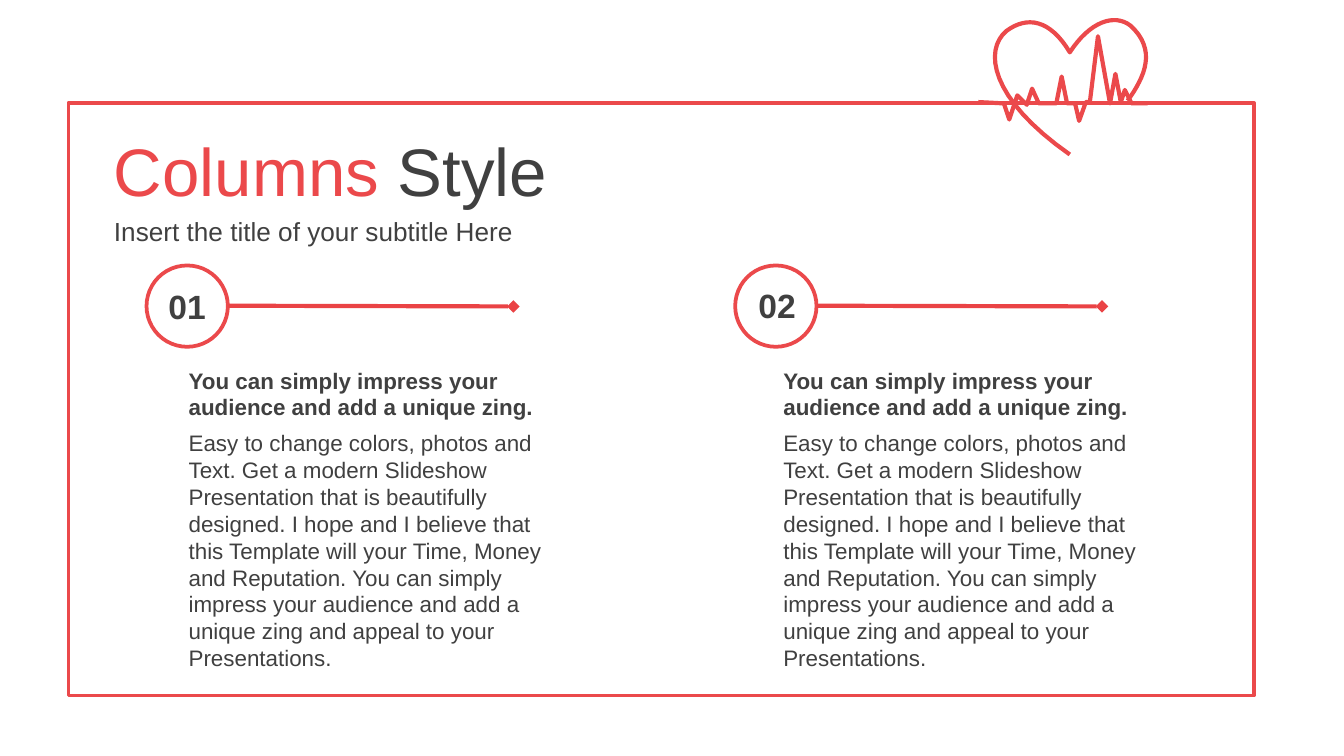
from lxml import etree
from pptx import Presentation
from pptx.dml.color import RGBColor
from pptx.enum.shapes import MSO_CONNECTOR, MSO_SHAPE
from pptx.enum.text import MSO_ANCHOR
from pptx.oxml.ns import qn
from pptx.util import Emu, Pt

PX = 4572  # EMU per px, 200 px to the inch
RED = RGBColor(0xEB, 0x49, 0x4B)
LINE_RED = RGBColor(0xEA, 0x43, 0x45)
DARK = RGBColor(0x40, 0x40, 0x40)
WHITE = RGBColor(0xFF, 0xFF, 0xFF)
FONT = "Arial"
RECT, OVAL = MSO_SHAPE.RECTANGLE, MSO_SHAPE.OVAL
STRAIGHT = MSO_CONNECTOR.STRAIGHT
TOP, MIDDLE = MSO_ANCHOR.TOP, MSO_ANCHOR.MIDDLE

HEADING = "You can simply impress your audience and add a unique zing."
BODY = ("Easy to change colors, photos and Text. Get a modern Slideshow "
        "Presentation that is beautifully designed. I hope and I believe that "
        "this Template will your Time, Money and Reputation. You can simply "
        "impress your audience and add a unique zing and appeal to your "
        "Presentations.")

# Number, circle left, number position, text left
COLUMNS = [
    ("01", 218, (231, 416), 261),
    ("02", 1094, (1109, 414), 1146),
]

# Heart outline: start point, then two control points and an end per curve
HEART_START = (1592, 230)
HEART_CURVES = [
    ((1472, 146), (1464, 74), (1498, 46)),
    ((1528, 24), (1562, 28), (1592, 78)),
    ((1622, 32), (1658, 20), (1682, 38)),
    ((1722, 74), (1704, 114), (1678, 150)),
]
PULSE = [
    (1456, 152), (1494, 154), (1502, 178), (1514, 142), (1528, 156),
    (1536, 132), (1546, 154), (1572, 154), (1580, 114), (1588, 154),
    (1600, 154), (1606, 180), (1616, 152), (1622, 152), (1634, 54),
    (1652, 154), (1660, 110), (1668, 152), (1674, 134), (1684, 154),
    (1708, 154),
]


def px(*values):
    return [Emu(round(v * PX)) for v in values]


def style_line(line, color, width):
    line.color.rgb = color
    line.width = Pt(width)


def add_outline(s, kind, box, fill=None):
    sp = s.shapes.add_shape(kind, *px(*box))
    sp.shadow.inherit = False
    if fill is None:
        sp.fill.background()
    else:
        sp.fill.solid()
        sp.fill.fore_color.rgb = fill
    style_line(sp.line, RED, 2)


def add_path(s, points):
    start, *rest = [px(*point) for point in points]
    builder = s.shapes.build_freeform(*start)
    builder.add_line_segments(rest, close=False)
    sp = builder.convert_to_shape()
    sp.shadow.inherit = False
    sp.fill.background()
    style_line(sp.line, RED, 2.25)


def curve_points(start, curves, steps=16):
    """Points along a chain of cubic Bezier curves."""
    points = [start]
    for c1, c2, end in curves:
        for i in range(1, steps + 1):
            t = i / steps
            u = 1 - t
            points.append(tuple(
                u**3 * a + 3 * u * u * t * b + 3 * u * t * t * c + t**3 * d
                for a, b, c, d in zip(start, c1, c2, end)))
        start = end
    return points


def add_text(s, box, runs, size, bold=False, wrap=True, anchor=TOP, before=0):
    tf = s.shapes.add_textbox(*px(*box)).text_frame
    tf.word_wrap = wrap
    tf.vertical_anchor = anchor
    p = tf.paragraphs[0]
    p.space_before = Pt(before)
    for text, color in runs:
        r = p.add_run()
        r.text = text
        r.font.name = FONT
        r.font.size = Pt(size)
        r.font.bold = bold
        r.font.color.rgb = color


def add_pointer(s, x, y, length):
    cxn = s.shapes.add_connector(STRAIGHT, *px(x, y, x + length, y + 1))
    style_line(cxn.line, LINE_RED, 2.25)
    sp_pr = cxn._element.spPr
    etree.SubElement(sp_pr.find(qn("a:ln")), qn("a:tailEnd"), type="diamond")
    etree.SubElement(sp_pr, qn("a:effectLst"))


def add_column(s, number, circle_x, number_at, text_x):
    add_text(s, (text_x, 629, 610, 344), [(BODY, DARK)], 12)
    add_text(s, (text_x, 536, 610, 100), [(HEADING, DARK)], 12, bold=True)
    add_outline(s, OVAL, (circle_x, 395, 121, 121), WHITE)
    add_text(s, (*number_at, 96, 80), [(number, DARK)], 18, bold=True, wrap=False)
    add_pointer(s, circle_x + 122, 455, 424)


def main():
    prs = Presentation()
    prs.slide_width, prs.slide_height = px(2000, 1125)
    s = prs.slides.add_slide(prs.slide_layouts[6])

    # Frame with heart and pulse
    add_outline(s, RECT, (102, 153, 1764, 882))
    add_path(s, curve_points(HEART_START, HEART_CURVES))
    add_path(s, PULSE)

    # Title and subtitle
    add_text(s, (150, 193, 1332, 118), [("Columns", RED), (" Style", DARK)], 36,
             anchor=MIDDLE, before=7)
    add_text(s, (150, 315, 1332, 58),
             [("Insert the title of your subtitle Here", DARK)], 14,
             anchor=MIDDLE, before=3)

    # Numbered columns
    for column in COLUMNS:
        add_column(s, *column)

    prs.save("out.pptx")


if __name__ == "__main__":
    main()
